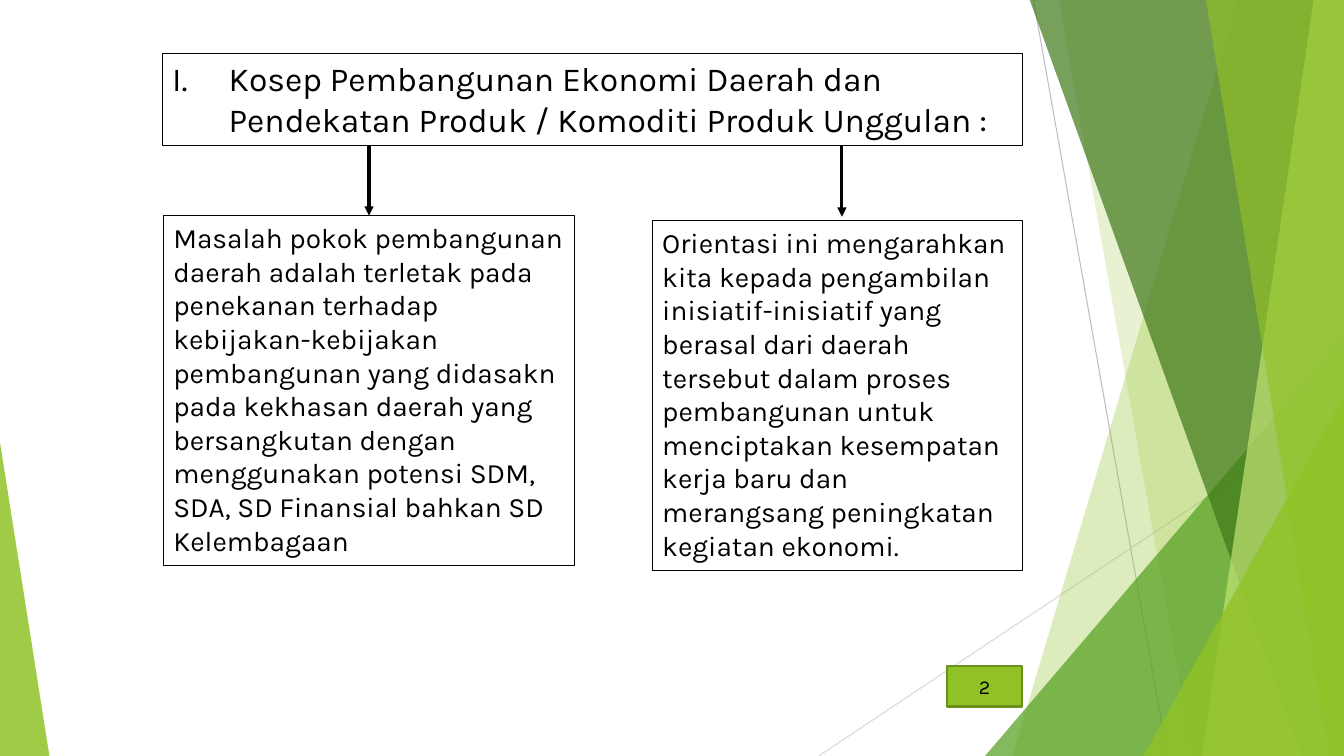
"""Build a slide with a heading that leads to two explanatory boxes."""
from dataclasses import dataclass

from lxml.etree import SubElement
from pptx import Presentation
from pptx.dml.color import RGBColor
from pptx.enum.shapes import MSO_CONNECTOR as Connector, MSO_SHAPE as Shape
from pptx.enum.text import MSO_ANCHOR as Anchor, MSO_AUTO_SIZE as AutoSize, PP_ALIGN as Align
from pptx.oxml.ns import qn
from pptx.util import Inches, Pt


@dataclass(frozen=True)
class Theme:
    font: str = "Karla"
    ink: str = "000000"
    lime: str = "90C226"
    pale_lime: str = "C0E474"
    green: str = "54A021"
    dark_green: str = "3F7819"
    badge_border: str = "6B901C"
    ray_grey: str = "BFBFBF"
    ray_light: str = "D9D9D9"
    heading_size: int = 24
    body_size: int = 20
    number_size: int = 14


theme = Theme()
WIDTH, HEIGHT = 13.33, 7.5
FACET_TOP = -0.01


def add_line(start, end, colour, weight):
    points = [Inches(value) for value in (*start, *end)]
    line = slide.shapes.add_connector(Connector.STRAIGHT, *points)
    line.line.color.rgb = RGBColor.from_string(colour)
    line.line.width = Pt(weight)
    SubElement(line._element.spPr, qn("a:effectLst"))
    return line


def paint(shape, colour, opacity):
    shape.shadow.inherit = False
    shape.line.fill.background()
    shape.fill.solid()
    shape.fill.fore_color.rgb = RGBColor.from_string(colour)
    colour_element = shape._element.spPr.find(qn("a:solidFill"))[0]
    SubElement(colour_element, qn("a:alpha"), val=str(opacity * 1000))


presentation = Presentation()
presentation.slide_width = Inches(WIDTH)
presentation.slide_height = Inches(HEIGHT)
slide = presentation.slides.add_slide(presentation.slide_layouts[6])

add_line((10.25, 0), (11.58, HEIGHT), theme.ray_grey, 0.75)
add_line((WIDTH, 4.03), (8.12, HEIGHT), theme.ray_light, 0.75)

# fmt: off
facets = [
    ("band", (12.28, 10.04), theme.lime, 30),
    ("band", (10.5, 11.83), theme.lime, 20),
    ("triangle", (9.77, 3.33, 3.56, 1), theme.green, 72),
    ("band", (10.21, 12.91), theme.dark_green, 70),
    ("band", (13.03, 11.92), theme.pale_lime, 70),
    ("band", (11.96, 13.18), theme.lime, 65),
    ("triangle", (11.34, 3.93, 1.99, 1), theme.lime, 80),
    ("triangle", (0, 4.39, 0.49, 0), theme.lime, 85),
]
for kind, geometry, colour, opacity in facets:
    if kind == "band":
        top_x, bottom_x = geometry
        builder = slide.shapes.build_freeform(Inches(top_x), Inches(FACET_TOP))
        corners = [(WIDTH, FACET_TOP), (WIDTH, HEIGHT), (bottom_x, HEIGHT)]
        builder.add_line_segments([(Inches(x), Inches(y)) for x, y in corners], close=True)
        facet = builder.convert_to_shape()
    else:
        left, top, width, apex = geometry
        frame = [Inches(value) for value in (left, top, width, HEIGHT - top)]
        facet = slide.shapes.add_shape(Shape.ISOSCELES_TRIANGLE, *frame)
        facet.adjustments[0] = apex
    paint(facet, colour, opacity)

heading = "Kosep Pembangunan Ekonomi Daerah dan Pendekatan Produk / Komoditi Produk Unggulan :"
problem = (
    "Masalah pokok pembangunan daerah adalah terletak pada penekanan terhadap "
    "kebijakan-kebijakan pembangunan yang didasakn pada kekhasan daerah yang bersangkutan "
    "dengan menggunakan potensi SDM, SDA, SD Finansial bahkan SD Kelembagaan"
)
orientation = (
    "Orientasi ini mengarahkan kita kepada pengambilan inisiatif-inisiatif yang berasal "
    "dari daerah tersebut dalam proses pembangunan untuk menciptakan kesempatan kerja baru "
    "dan merangsang peningkatan kegiatan ekonomi."
)
boxes = [
    ((9.39, 6.61, 0.75, 0.4), "2", theme.number_size),
    ((1.61, 0.53, 8.53, 0.91), heading, theme.heading_size),
    ((1.62, 2.14, 4.08, 3.47), problem, theme.body_size),
    ((6.47, 2.19, 3.67, 3.47), orientation, theme.body_size),
]
for frame, text, size in boxes:
    is_badge = size == theme.number_size
    box = slide.shapes.add_shape(Shape.RECTANGLE, *[Inches(value) for value in frame])
    box.shadow.inherit = False
    box.line.color.rgb = RGBColor.from_string(theme.badge_border if is_badge else theme.ink)
    box.line.width = Pt(1.5 if is_badge else 0.75)
    if is_badge:
        box.fill.solid()
        box.fill.fore_color.rgb = RGBColor.from_string(theme.lime)
    else:
        box.fill.background()
    text_frame = box.text_frame
    text_frame.text = text
    text_frame.word_wrap = True
    text_frame.auto_size = AutoSize.NONE if is_badge else AutoSize.SHAPE_TO_FIT_TEXT
    text_frame.vertical_anchor = Anchor.MIDDLE if is_badge else Anchor.TOP
    paragraph = text_frame.paragraphs[0]
    paragraph.alignment = Align.CENTER if is_badge else Align.LEFT
    font = paragraph.runs[0].font
    font.name = theme.font
    font.size = Pt(size)
    font.color.rgb = RGBColor.from_string(theme.ink)
    if text == heading:
        properties = paragraph._p.get_or_add_pPr()
        properties.set("marL", str(Inches(0.56)))
        properties.set("indent", str(Inches(-0.56)))
        SubElement(properties, qn("a:buFont"), typeface=theme.font)
        SubElement(properties, qn("a:buAutoNum"), type="romanUcPeriod")

for x, top in [(3.66, 1.44), (8.35, 1.45)]:
    arrow = add_line((x, top), (x, top + 0.7), theme.ink, 2.25)
    SubElement(arrow.line._get_or_add_ln(), qn("a:tailEnd"), type="triangle")

presentation.save("out.pptx")
